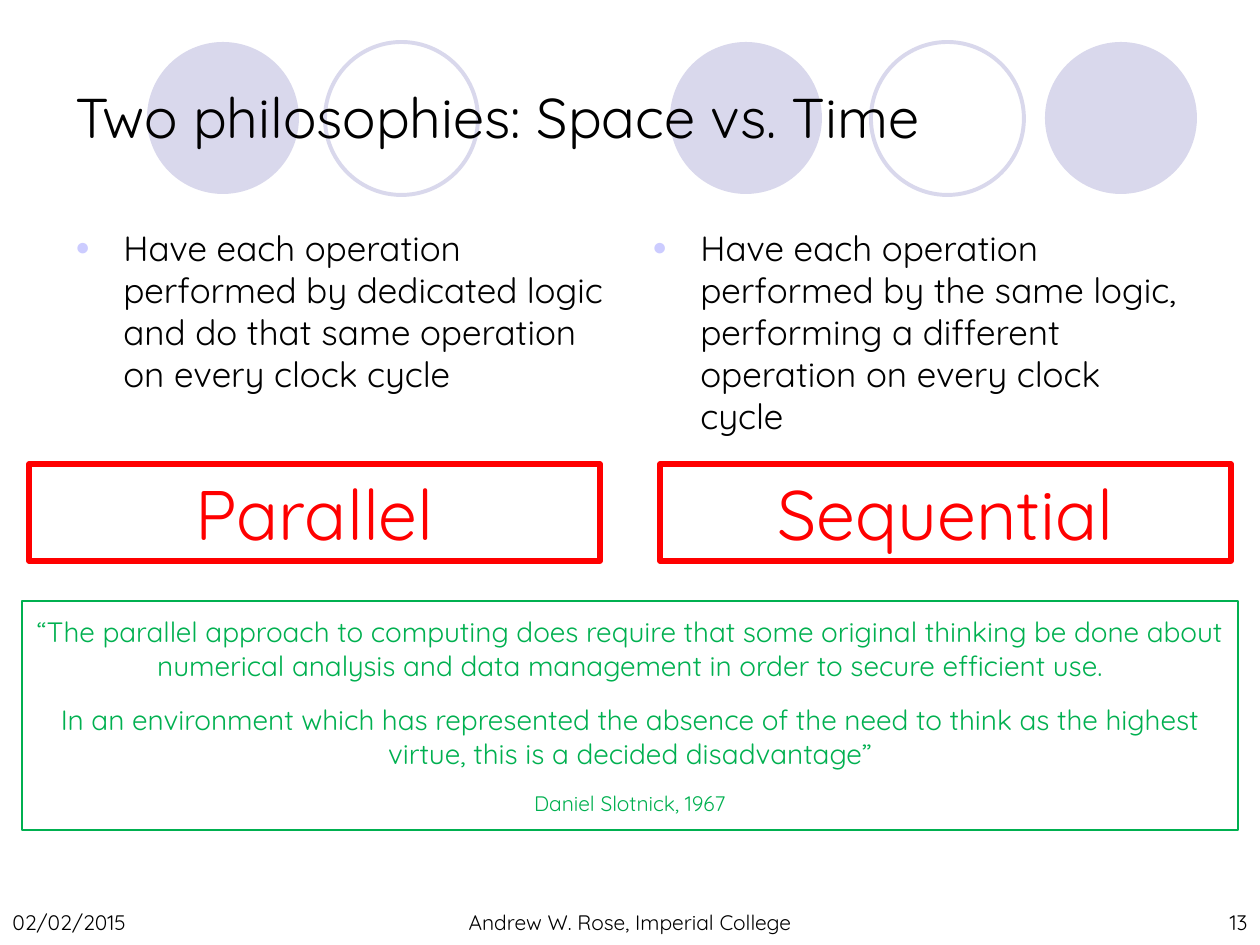
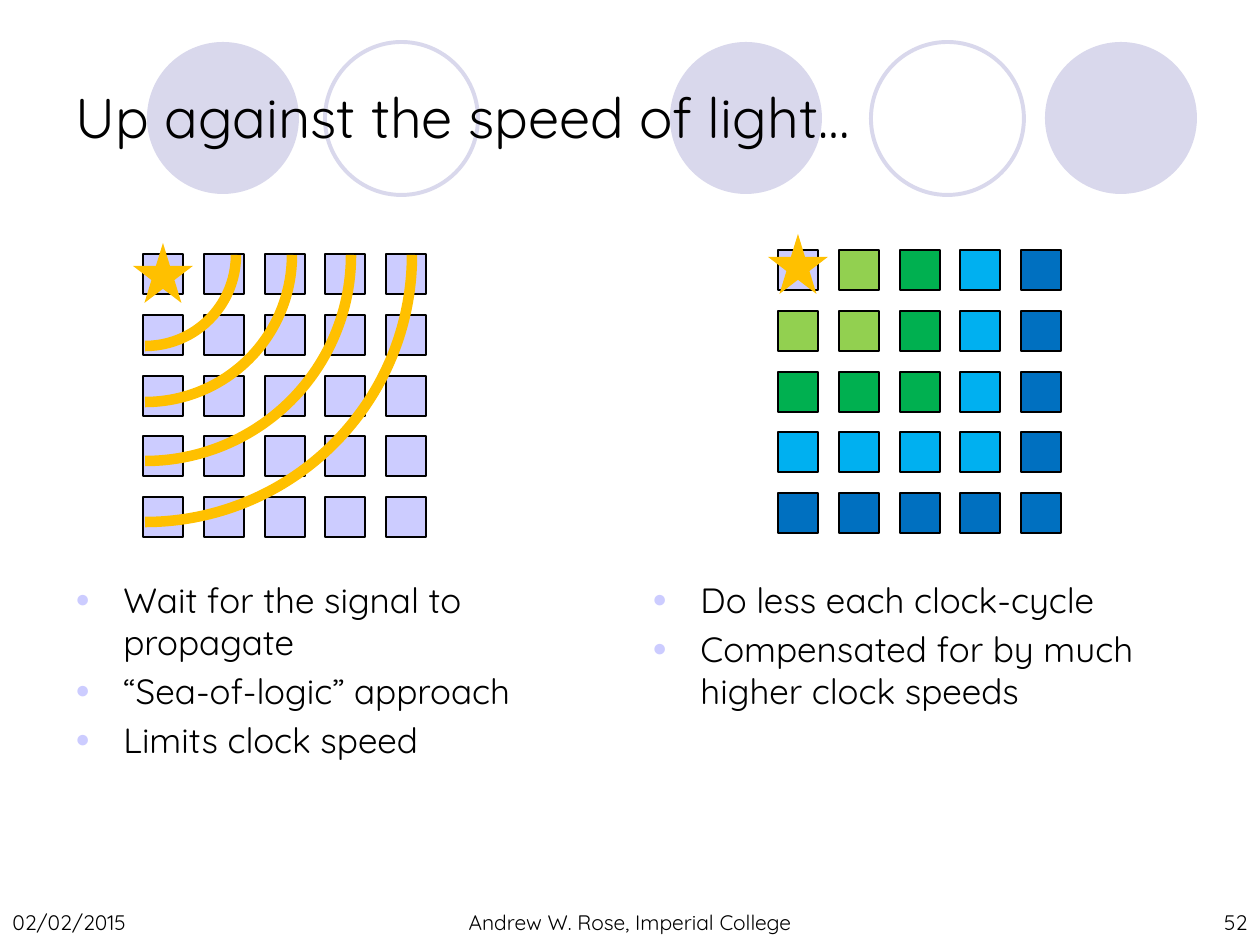
from lxml.etree import SubElement
from pptx import Presentation
from pptx.dml.color import RGBColor
from pptx.enum.shapes import MSO_SHAPE as Preset
from pptx.enum.text import MSO_ANCHOR as Anchor, PP_ALIGN as Align
from pptx.oxml.ns import qn
from pptx.util import Emu, Pt

EMU_PER_PX = 914400 / 126
SLIDE_SIZE = (1260, 945)
FONT = "Quicksand"
COLOURS = {
    "text": "000000",
    "paper": "FFFFFF",
    "circle": "D9D8EC",
    "lilac": "CCCCFF",
    "lime": "92D050",
    "green": "00B050",
    "sky": "00B0F0",
    "blue": "0070C0",
    "amber": "FFC000",
    "red": "FF0000",
}

# Chip grid: five by five cells, spread over one span
CELLS = 5
CELL_SIZE = 40
GRID_SPAN = 243
STAR_SIZE = 60


def px(length):
    return Emu(round(length * EMU_PER_PX))


def colour(name):
    return RGBColor.from_string(COLOURS[name])


def apply_format(target, values):
    for attribute, value in values.items():
        setattr(target, attribute, value)


def add_bullet(paragraph):
    properties = paragraph._p.get_or_add_pPr()
    apply_format(paragraph, {"space_before": Pt(0)})
    for attribute, value in {"marL": px(48), "indent": -px(48)}.items():
        properties.set(attribute, str(value))
    bullet_colour = SubElement(properties, qn("a:buClr"))
    SubElement(bullet_colour, qn("a:srgbClr"), val=COLOURS["lilac"])
    SubElement(properties, qn("a:buSzPct"), val="70000")
    SubElement(properties, qn("a:buFont"), typeface="Arial")
    SubElement(properties, qn("a:buChar"), char="●")


def write(shape, lines, ink="text", align=Align.LEFT, anchor=Anchor.MIDDLE,
          gap=0, bulleted=False):
    """Fill a shape with (text, point size) lines, one paragraph each."""
    frame = shape.text_frame
    apply_format(frame, {"word_wrap": True, "vertical_anchor": anchor})
    for index, (text, size) in enumerate(lines):
        paragraph = frame.add_paragraph() if index else frame.paragraphs[0]
        if bulleted:
            add_bullet(paragraph)
        apply_format(paragraph, {"alignment": align,
                                 "space_before": Pt(gap if index else 0)})
        run = paragraph.add_run()
        run.text = text
        apply_format(run.font, {"name": FONT, "size": Pt(size)})
        run.font.color.rgb = colour(ink)


def add_text(slide, box, lines, **style):
    write(slide.shapes.add_textbox(*map(px, box)), lines, **style)


def add_preset(slide, preset, box, fill=None, line=None, width=0.75):
    shape = slide.shapes.add_shape(preset, *map(px, box))
    shape.shadow.inherit = False
    if fill:
        shape.fill.solid()
        shape.fill.fore_color.rgb = colour(fill)
    else:
        shape.fill.background()
    if line:
        shape.line.color.rgb = colour(line)
        shape.line.width = Pt(width)
    else:
        shape.line.fill.background()
    return shape


# Shared slide parts
def add_base_slide(deck, title, number):
    slide = deck.slides.add_slide(deck.slide_layouts[6])
    for left in (147, 670, 1045):
        add_preset(slide, Preset.OVAL, (left, 42, 152, 152), fill="circle")
    for left in (325, 871):
        add_preset(slide, Preset.OVAL, (left, 42, 153, 153),
                   line="circle", width=2.25)
    add_text(slide, (63, 38, 1134, 157), [(title, 32)])

    footers = (
        (0, 294, "02/02/2015", Align.LEFT),
        (430, 400, "Andrew W. Rose, Imperial College", Align.CENTER),
        (966, 294, number, Align.RIGHT),
    )
    for left, width, text, align in footers:
        add_text(slide, (left, 900, width, 45), [(text, 12)], align=align)
    return slide


def add_bullet_columns(slide, top, height, columns):
    for left, points in zip((63, 640), columns):
        add_text(slide, (left, top, 557, height),
                 [(point, 20) for point in points],
                 anchor=Anchor.TOP, gap=4, bulleted=True)


# Philosophy slide parts
def add_verdict(slide, left, word):
    verdict = add_preset(slide, Preset.RECTANGLE, (left, 464, 571, 97),
                         fill="paper", line="red", width=3)
    paper = verdict._element.spPr.find(qn("a:solidFill"))[0]
    SubElement(paper, qn("a:alpha"), val="67000")
    write(verdict, [(word, 40)], ink="red", align=Align.CENTER)


def add_quote(slide, lines):
    quote = add_preset(slide, Preset.RECTANGLE, (22, 601, 1216, 229),
                       fill="paper", line="green", width=1)
    write(quote, lines, ink="green", align=Align.CENTER, gap=12)


# Speed of light slide parts
def add_chip(slide, left, top, ring_colours, star_top):
    """Colour each cell by its distance in rings from the top left one."""
    offsets = [round(GRID_SPAN * step / (CELLS - 1)) for step in range(CELLS)]
    for row, down in enumerate(offsets):
        for column, across in enumerate(offsets):
            add_preset(slide, Preset.RECTANGLE,
                       (left + across, top + down, CELL_SIZE, CELL_SIZE),
                       fill=ring_colours[max(row, column)], line="text")
    star_left = left + (CELL_SIZE - STAR_SIZE) // 2
    add_preset(slide, Preset.STAR_5_POINT,
               (star_left, star_top, STAR_SIZE, STAR_SIZE), fill="amber")


def add_wavefronts(slide, centre_x, centre_y, radii):
    for radius in radii:
        wavefront = add_preset(
            slide, Preset.ARC,
            (centre_x - radius, centre_y - radius, 2 * radius, 2 * radius),
            line="amber", width=6)
        wavefront.rotation = 90


def build_philosophies(deck):
    slide = add_base_slide(deck, "Two philosophies: Space vs. Time", "13")
    add_bullet_columns(slide, 220, 232, (
        ["Have each operation performed by dedicated logic and do that same "
         "operation on every clock cycle"],
        ["Have each operation performed by the same logic, performing a "
         "different operation on every clock cycle"],
    ))
    add_quote(slide, [
        ("“The parallel approach to computing does require that some original "
         "thinking be done about numerical analysis and data management in "
         "order to secure efficient use.", 16),
        ("In an environment which has represented the absence of the need to "
         "think as the highest virtue, this is a decided disadvantage”", 16),
        ("Daniel Slotnick, 1967", 12),
    ])
    add_verdict(slide, 29, "Parallel")
    add_verdict(slide, 660, "Sequential")


def build_speed_of_light(deck):
    slide = add_base_slide(deck, "Up against the speed of light…", "52")
    add_bullet_columns(slide, 572, 273, (
        ["Wait for the signal to propagate", "“Sea-of-logic” approach",
         "Limits clock speed"],
        ["Do less each clock-cycle",
         "Compensated for by much higher clock speeds"],
    ))
    add_chip(slide, 143, 254, ["lilac"] * CELLS, star_top=243)
    add_wavefronts(slide, 145, 255, (91, 147, 206, 267))
    add_chip(slide, 778, 250, ["lilac", "lime", "green", "sky", "blue"],
             star_top=234)


def main():
    deck = Presentation()
    width, height = map(px, SLIDE_SIZE)
    apply_format(deck, {"slide_width": width, "slide_height": height})
    build_philosophies(deck)
    build_speed_of_light(deck)
    deck.save("out.pptx")


if __name__ == "__main__":
    main()
